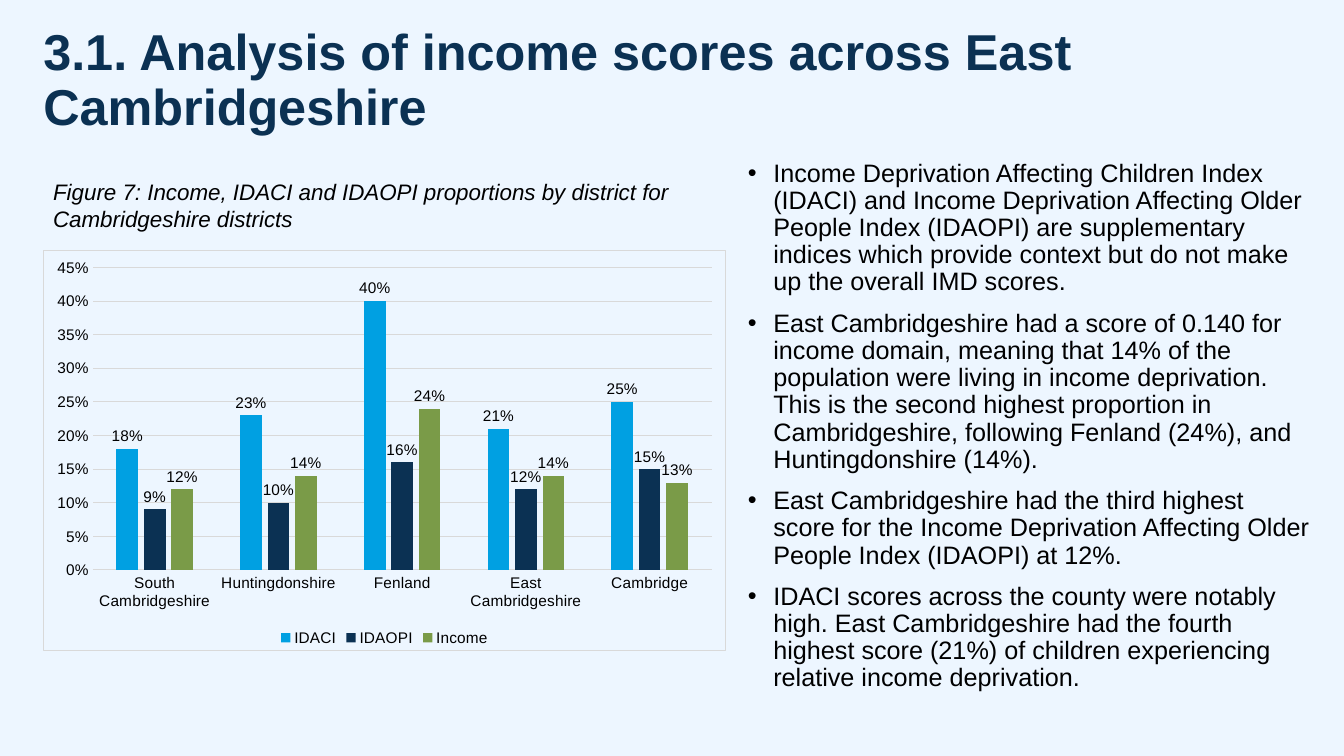
"""Build the slide on income scores across Cambridgeshire districts."""
from dataclasses import dataclass

from lxml.etree import SubElement
from pptx import Presentation
from pptx.chart.data import CategoryChartData
from pptx.dml.color import RGBColor
from pptx.enum.chart import XL_CHART_TYPE as ChartType
from pptx.enum.chart import XL_LABEL_POSITION as LabelPos
from pptx.enum.chart import XL_LEGEND_POSITION as LegendPos
from pptx.enum.chart import XL_TICK_MARK as Tick
from pptx.enum.text import MSO_ANCHOR as Anchor
from pptx.enum.text import MSO_AUTO_SIZE as AutoSize
from pptx.enum.text import PP_ALIGN as Align
from pptx.oxml import parse_xml
from pptx.oxml.ns import nsdecls, qn
from pptx.util import Cm, Pt


@dataclass(frozen=True)
class Theme:
    font: str = "Arial"
    background: str = "EDF6FF"
    navy: str = "0B3153"
    sky: str = "00A0E2"
    green: str = "7A9B48"
    text: str = "000000"
    grid: str = "D9D9D9"
    title_size: int = 36
    body_size: int = 18
    caption_size: int = 16
    chart_size: int = 11
    line_width: float = 0.75


def apply(target, values):
    for name, value in values.items():
        setattr(target, name, value)


class SlideBuilder:
    def __init__(self, slide, theme):
        self.slide = slide
        self.theme = theme
        fill = slide.background.fill
        fill.solid()
        fill.fore_color.rgb = RGBColor.from_string(theme.background)

    def style_font(self, font, size, color, **extra):
        apply(font, {"name": self.theme.font, "size": Pt(size), **extra})
        font.color.rgb = RGBColor.from_string(color)

    def style_line(self, line):
        line.color.rgb = RGBColor.from_string(self.theme.grid)
        line.width = Pt(self.theme.line_width)

    def place(self, shape, box):
        sides = ("left", "top", "width", "height")
        apply(shape, {side: Cm(length) for side, length in zip(sides, box)})

    def frame(self, shape, inset_x=0, inset_y=0):
        apply(shape.text_frame, {
            "word_wrap": True, "auto_size": AutoSize.NONE,
            "vertical_anchor": Anchor.TOP,
            "margin_left": Cm(inset_x), "margin_right": Cm(inset_x),
            "margin_top": Cm(inset_y), "margin_bottom": Cm(inset_y)})
        return shape.text_frame

    def title(self, text, box):
        heading = self.slide.shapes.title
        self.place(heading, box)
        paragraph = self.frame(heading).paragraphs[0]
        paragraph.text = text
        apply(paragraph, {"alignment": Align.LEFT, "line_spacing": 0.9,
                          "space_after": Pt(6)})
        self.style_font(paragraph.runs[0].font, self.theme.title_size,
                        self.theme.navy, bold=True)

    def text_box(self, box, **insets):
        shape = self.slide.shapes.add_textbox(*map(Cm, box))
        return self.frame(shape, **insets)

    def caption(self, text, box):
        paragraph = self.text_box(box, inset_x=0.25, inset_y=0.13).paragraphs[0]
        paragraph.text = text
        self.style_font(paragraph.runs[0].font, self.theme.caption_size,
                        self.theme.text, italic=True)

    def bullets(self, points, box):
        frame = self.text_box(box)
        for index, point in enumerate(points):
            paragraph = frame.add_paragraph() if index else frame.paragraphs[0]
            paragraph.text = point
            apply(paragraph, {"line_spacing": 0.9,
                              "space_before": Pt(10 if index else 0)})
            properties = paragraph._p.get_or_add_pPr()
            properties.set("marL", str(Cm(0.64)))
            properties.set("indent", str(-Cm(0.64)))
            SubElement(properties, qn("a:buFont")).set("typeface", self.theme.font)
            SubElement(properties, qn("a:buChar")).set("char", "•")
            self.style_font(paragraph.runs[0].font, self.theme.body_size,
                            self.theme.text)

    def column_chart(self, categories, series, box):
        theme = self.theme
        data = CategoryChartData(number_format="0%")
        data.categories = categories
        for name, (_, values) in series.items():
            data.add_series(name, values)
        chart = self.slide.shapes.add_chart(
            ChartType.COLUMN_CLUSTERED, *map(Cm, box), data).chart
        apply(chart, {"has_title": False, "has_legend": True})
        self.style_font(chart.font, theme.chart_size, theme.text)
        apply(chart.legend, {"position": LegendPos.BOTTOM,
                             "include_in_layout": False})
        self.style_font(chart.legend.font, theme.chart_size, theme.text)
        self.chart_border(chart)

        for axis in (chart.category_axis, chart.value_axis):
            apply(axis, {"major_tick_mark": Tick.NONE,
                         "minor_tick_mark": Tick.NONE})
            self.style_font(axis.tick_labels.font, theme.chart_size, theme.text)
        self.style_line(chart.category_axis.format.line)
        scale = chart.value_axis
        apply(scale, {"minimum_scale": 0, "maximum_scale": 0.45,
                      "major_unit": 0.05, "has_major_gridlines": True})
        apply(scale.tick_labels, {"number_format": "0%",
                                  "number_format_is_linked": False})
        scale.format.line.fill.background()
        self.style_line(scale.major_gridlines.format.line)

        plot = chart.plots[0]
        apply(plot, {"gap_width": 219, "overlap": -27,
                     "vary_by_categories": False})
        for columns, (color, _) in zip(plot.series, series.values()):
            columns.format.fill.solid()
            columns.format.fill.fore_color.rgb = RGBColor.from_string(color)
            labels = columns.data_labels
            apply(labels, {"show_value": True, "position": LabelPos.OUTSIDE_END,
                           "number_format": "0%",
                           "number_format_is_linked": False})
            self.style_font(labels.font, theme.chart_size, theme.text)

    def chart_border(self, chart):
        border = parse_xml(
            f'<c:spPr {nsdecls("c", "a")}><a:noFill/>'
            f'<a:ln w="{Pt(self.theme.line_width)}"><a:solidFill>'
            f'<a:srgbClr val="{self.theme.grid}"/></a:solidFill></a:ln></c:spPr>')
        chart.element.find(qn("c:chart")).addnext(border)


def main():
    theme = Theme()
    deck = Presentation()
    apply(deck, {"slide_width": Cm(33.87), "slide_height": Cm(19.05)})
    builder = SlideBuilder(deck.slides.add_slide(deck.slide_layouts[5]), theme)

    left, chart_width = 1.09, 17.2
    builder.title("3.1. Analysis of income scores across East Cambridgeshire",
                  (left, 0.69, 26.31, 3.38))
    builder.caption("Figure 7: Income, IDACI and IDAOPI proportions by district "
                    "for Cambridgeshire districts",
                    (left, 4.37, chart_width, 1.63))
    builder.bullets((
        "Income Deprivation Affecting Children Index (IDACI) and Income "
        "Deprivation Affecting Older People Index (IDAOPI) are supplementary "
        "indices which provide context but do not make up the overall IMD scores.",
        "East Cambridgeshire had a score of 0.140 for income domain, meaning that "
        "14% of the population were living in income deprivation. This is the "
        "second highest proportion in Cambridgeshire, following Fenland (24%), "
        "and Huntingdonshire (14%).",
        "East Cambridgeshire had the third highest score for the Income "
        "Deprivation Affecting Older People Index (IDAOPI) at 12%.",
        "IDACI scores across the county were notably high. East Cambridgeshire "
        "had the fourth highest score (21%) of children experiencing relative "
        "income deprivation.",
    ), (18.85, 4.04, 14.22, 13.21))

    districts = ("South Cambridgeshire", "Huntingdonshire", "Fenland",
                 "East Cambridgeshire", "Cambridge")
    scores = {
        "IDACI": (theme.sky, (0.18, 0.23, 0.4, 0.21, 0.25)),
        "IDAOPI": (theme.navy, (0.09, 0.1, 0.16, 0.12, 0.15)),
        "Income": (theme.green, (0.12, 0.14, 0.24, 0.14, 0.13)),
    }
    builder.column_chart(districts, scores, (left, 6.3, chart_width, 10.11))
    deck.save("out.pptx")


if __name__ == "__main__":
    main()
